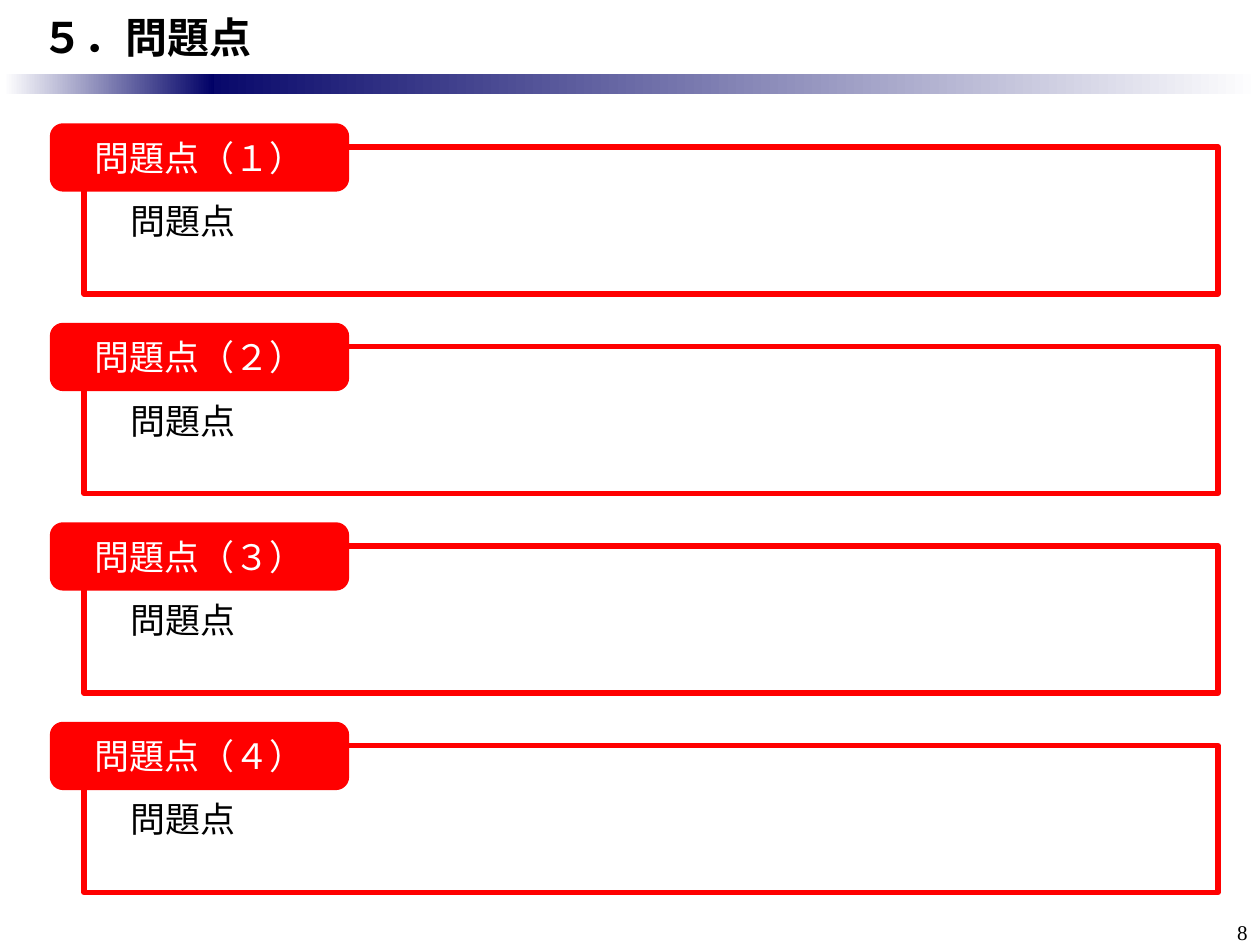
from lxml import etree
from pptx import Presentation
from pptx.dml.color import RGBColor
from pptx.enum.shapes import MSO_SHAPE
from pptx.enum.text import MSO_ANCHOR, PP_ALIGN
from pptx.oxml.ns import qn
from pptx.util import Inches, Pt

RECTANGLE, ROUNDED = MSO_SHAPE.RECTANGLE, MSO_SHAPE.ROUNDED_RECTANGLE
TOP, MIDDLE = MSO_ANCHOR.TOP, MSO_ANCHOR.MIDDLE
LEFT, CENTER, RIGHT = PP_ALIGN.LEFT, PP_ALIGN.CENTER, PP_ALIGN.RIGHT

COLORS = {"navy": "000066", "white": "FFFFFF", "red": "FF0000", "black": "000000"}
GOTHIC, ROMAN = "Noto Sans CJK JP", "Times New Roman"

# The page is a grid of 120 columns and 90 rows
CELL = Inches(10) // 120
COLUMNS, ROWS = 120, 90
FIRST_ROW, ROW_STEP = 12, 19
DIGITS = "１２３４"


def color(name):
    return RGBColor.from_string(COLORS[name])


def place(column, row, columns, rows):
    """Turn grid cells into left, top, width and height."""
    return [round(cells * CELL) for cells in (column, row, columns, rows)]


def write(shape, text, size, ink="black", font=GOTHIC, bold=False,
          align=LEFT, anchor=MIDDLE, indent=0.1, wrap=True):
    frame = shape.text_frame
    frame.word_wrap = wrap
    frame.vertical_anchor = anchor
    frame.margin_left = Inches(indent)
    para = frame.paragraphs[0]
    para.text = text
    para.alignment = align
    para.font.size = Pt(size)
    para.font.bold = bold
    para.font.color.rgb = color(ink)
    para.font.name = font
    # East Asian characters take their font from a:ea
    defaults = para._p.pPr.find(qn("a:defRPr"))
    etree.SubElement(defaults, qn("a:ea")).set("typeface", font)


def add_text(page, area, text, size, **style):
    write(page.shapes.add_textbox(*place(*area)), text, size, **style)


def add_fade(page, area, start, end):
    band = page.shapes.add_shape(RECTANGLE, *place(*area))
    band.shadow.inherit = False
    band.line.fill.background()
    band.fill.gradient()
    band.fill.gradient_angle = 0
    for stop, name in zip(band.fill.gradient_stops, (start, end)):
        stop.color.rgb = color(name)


def add_box(page, kind, area, fill, text, **style):
    box = page.shapes.add_shape(kind, *place(*area))
    box.shadow.inherit = False
    box.fill.solid()
    box.fill.fore_color.rgb = color(fill)
    box.line.color.rgb = color("red")
    box.line.width = Pt(3)
    write(box, text, 20, **style)


def main():
    deck = Presentation()
    deck.slide_width, deck.slide_height = COLUMNS * CELL, ROWS * CELL
    page = deck.slides.add_slide(deck.slide_layouts[6])

    # Header band, title and page number
    add_fade(page, (17, 7, 103, 2), "navy", "white")
    add_fade(page, (0.4, 7, 20, 2), "white", "navy")
    add_text(page, (0, 0, COLUMNS, 7), "５．問題点", 24, bold=True, indent=0.33)
    add_text(page, (113, 87, 7, 3), "8", 12, font=ROMAN, align=RIGHT, anchor=TOP)

    # One framed field with a label for each problem
    for index, digit in enumerate(DIGITS):
        row = FIRST_ROW + index * ROW_STEP
        add_box(page, RECTANGLE, (8, row + 2, 108, 14), "white", "問題点", indent=0.37)
        add_box(page, ROUNDED, (5, row, 28, 6), "red", f"問題点（{digit}）",
                ink="white", align=CENTER, wrap=False)

    deck.save("out.pptx")


if __name__ == "__main__":
    main()
